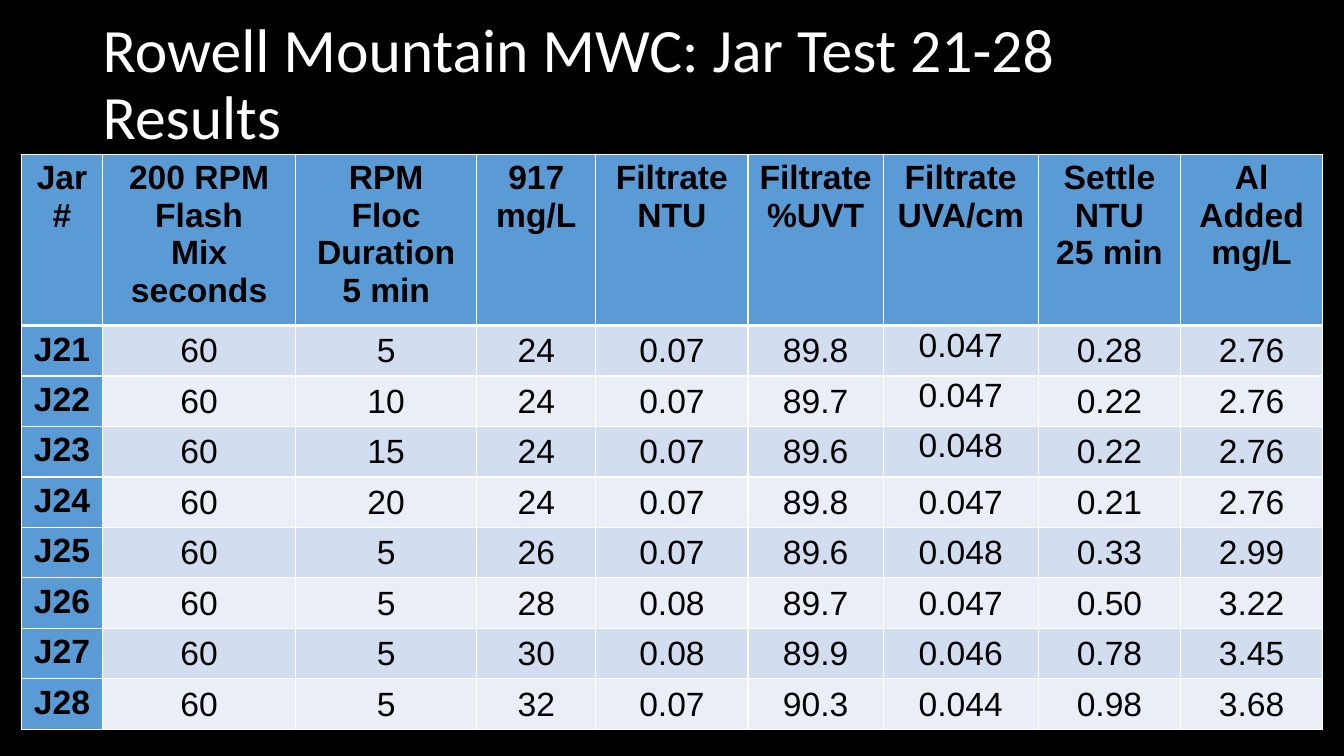
from lxml import etree
from pptx import Presentation
from pptx.dml.color import RGBColor
from pptx.enum import text
from pptx.oxml import ns
from pptx.util import Inches, Pt

TITLE = "Rowell Mountain MWC: Jar Test 21-28 Results"
HEADERS = [
    ["Jar", "#"],
    ["200 RPM", "Flash", "Mix", "seconds"],
    ["RPM", "Floc", "Duration", "5 min"],
    ["917", "mg/L"],
    ["Filtrate", "NTU"],
    ["Filtrate", "%UVT"],
    ["Filtrate", "UVA/cm"],
    ["Settle", "NTU", "25 min"],
    ["Al", "Added", "mg/L"],
]
JARS = [
    ("J21", "60", "5", "24", "0.07", "89.8", "0.047", "0.28", "2.76"),
    ("J22", "60", "10", "24", "0.07", "89.7", "0.047", "0.22", "2.76"),
    ("J23", "60", "15", "24", "0.07", "89.6", "0.048", "0.22", "2.76"),
    ("J24", "60", "20", "24", "0.07", "89.8", "0.047", "0.21", "2.76"),
    ("J25", "60", "5", "26", "0.07", "89.6", "0.048", "0.33", "2.99"),
    ("J26", "60", "5", "28", "0.08", "89.7", "0.047", "0.50", "3.22"),
    ("J27", "60", "5", "30", "0.08", "89.9", "0.046", "0.78", "3.45"),
    ("J28", "60", "5", "32", "0.07", "90.3", "0.044", "0.98", "3.68"),
]
COLUMN_WIDTHS = [0.81, 1.91, 1.8, 1.18, 1.51, 1.34, 1.54, 1.41, 1.41]
HEADER_HEIGHT, JAR_HEIGHT = 1.59, 0.47
UVA_COLUMN, LAST_TOP_UVA_ROW = 6, 3

BLACK = RGBColor(0x00, 0x00, 0x00)
WHITE = RGBColor(0xFF, 0xFF, 0xFF)
BLUE = RGBColor(0x5B, 0x9B, 0xD5)
BANDS = [RGBColor(0xEA, 0xEF, 0xF7), RGBColor(0xD2, 0xDE, 0xEF)]


def add_span(para, words, font, size, color, bold=False):
    span = para.add_run()
    span.text = words
    span.font.name = font
    span.font.size = Pt(size)
    span.font.color.rgb = color
    span.font.bold = bold


def set_borders(cell, bottom_width):
    """Draw white cell edges; they must come before the fill in tcPr."""
    widths = {"a:lnL": 1, "a:lnR": 1, "a:lnT": 1, "a:lnB": bottom_width}
    properties = cell._tc.get_or_add_tcPr()
    for place, (tag, width) in enumerate(widths.items()):
        line = etree.Element(ns.qn(tag), w=str(Pt(width)))
        fill = etree.SubElement(line, ns.qn("a:solidFill"))
        etree.SubElement(fill, ns.qn("a:srgbClr"), val=str(WHITE))
        properties.insert(place, line)


def fill_cell(cell, row, column, lines):
    heading = row == 0 or column == 0
    cell.fill.solid()
    cell.fill.fore_color.rgb = BLUE if heading else BANDS[row % 2]
    set_borders(cell, 3 if row == 0 else 1)
    if not heading:
        cell.margin_left = cell.margin_right = cell.margin_top = Inches(0.01)
        cell.margin_bottom = 0
    at_top = heading or (column == UVA_COLUMN and row <= LAST_TOP_UVA_ROW)
    cell.vertical_anchor = text.MSO_ANCHOR.TOP if at_top else text.MSO_ANCHOR.MIDDLE
    frame = cell.text_frame
    for index, words in enumerate(lines):
        para = frame.add_paragraph() if index else frame.paragraphs[0]
        para.alignment = text.PP_ALIGN.CENTER
        add_span(para, words, "Arial", 24, BLACK, heading)


def add_title(page):
    box = page.shapes.add_textbox(Inches(0.92), Inches(0.13), Inches(11.5), Inches(1.45))
    frame = box.text_frame
    frame.word_wrap = True
    frame.vertical_anchor = text.MSO_ANCHOR.MIDDLE
    para = frame.paragraphs[0]
    para.line_spacing = 0.9
    add_span(para, TITLE, "Calibri", 44, WHITE)


def add_results(page):
    rows = [HEADERS] + [[[value] for value in jar] for jar in JARS]
    heights = [HEADER_HEIGHT] + [JAR_HEIGHT] * len(JARS)
    table = page.shapes.add_table(
        len(rows), len(HEADERS), Inches(0.21), Inches(1.53),
        Inches(sum(COLUMN_WIDTHS)), Inches(sum(heights))).table
    table.first_col = True
    for column, width in zip(table.columns, COLUMN_WIDTHS):
        column.width = Inches(width)
    for row, height in zip(table.rows, heights):
        row.height = Inches(height)
    for row, cells in enumerate(rows):
        for column, lines in enumerate(cells):
            fill_cell(table.cell(row, column), row, column, lines)


def main():
    deck = Presentation()
    deck.slide_width, deck.slide_height = Inches(13.33), Inches(7.5)
    page = deck.slides.add_slide(deck.slide_layouts[6])
    page.background.fill.solid()
    page.background.fill.fore_color.rgb = BLACK
    add_title(page)
    add_results(page)
    deck.save("out.pptx")


if __name__ == "__main__":
    main()
